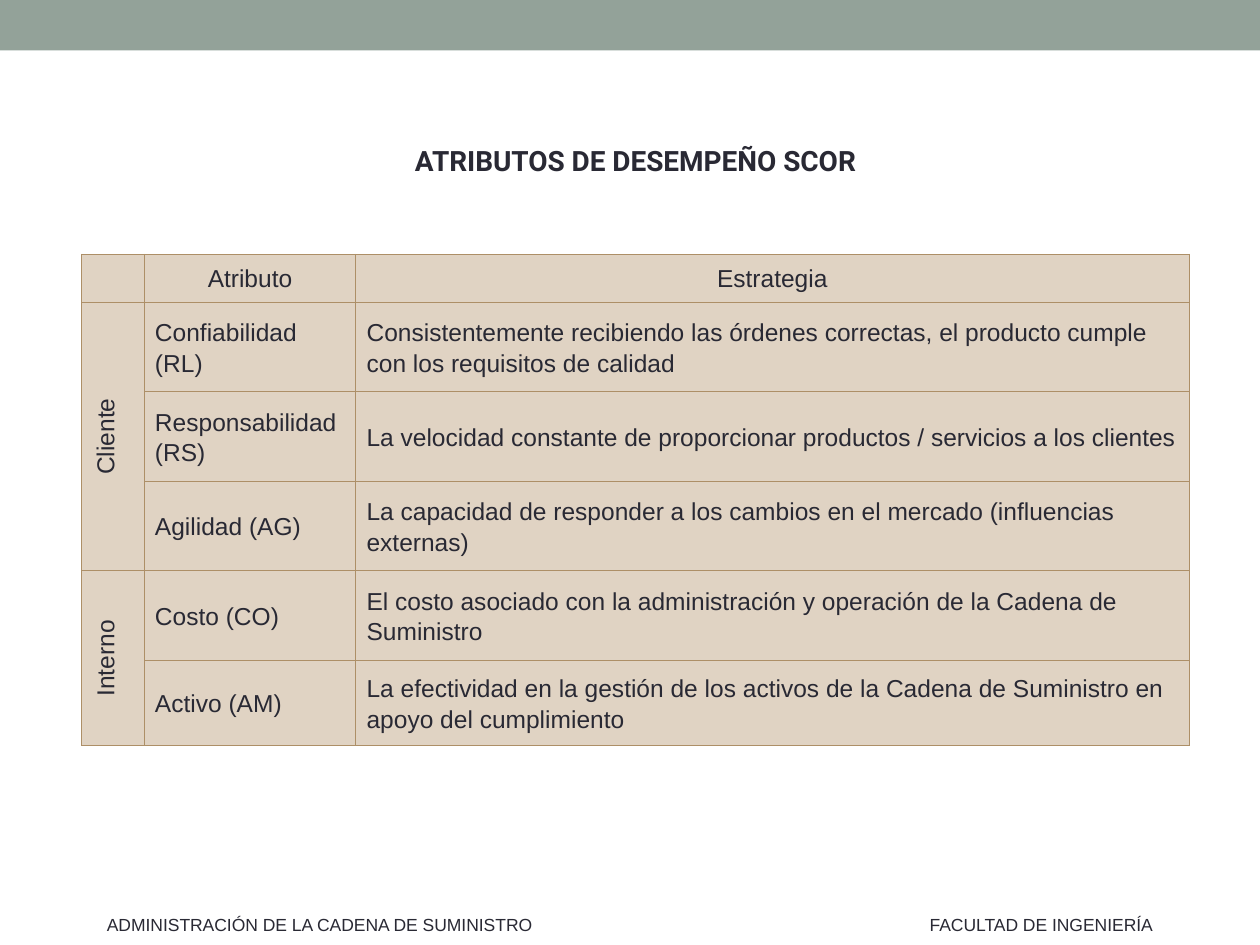
from dataclasses import dataclass

from lxml import etree
from pptx import Presentation
from pptx.dml.color import RGBColor
from pptx.enum import shapes, text
from pptx.oxml import ns
from pptx.util import Inches, Pt

WIDTH, HEIGHT = 10, 7.5
SAGE = RGBColor(0x93, 0xA2, 0x99)
INK = RGBColor(0x29, 0x29, 0x34)
SAND = RGBColor(0xE0, 0xD3, 0xC3)
BRONZE = RGBColor(0xAD, 0x8F, 0x67)

COLUMNS = (0.5, 1.67, 6.62)
ROWS = (0.38, 0.71, 0.71, 0.71, 0.71, 0.68)
HEADINGS = ("Atributo", "Estrategia")
HANGING = (0.14, -0.14)
FLUSH = (0, 0)
NUDGED = (0.03, 0)
CENTER = text.PP_ALIGN.CENTER
MIDDLE = text.MSO_ANCHOR.MIDDLE


@dataclass(frozen=True)
class Attribute:
    name: str
    strategy: str
    indent: tuple = HANGING


@dataclass(frozen=True)
class Group:
    name: str
    attributes: tuple


@dataclass(frozen=True)
class Label:
    words: str
    left: float
    top: float
    width: float
    height: float


GROUPS = (
    Group("Cliente", (
        Attribute("Confiabilidad (RL)",
                  "Consistentemente recibiendo las órdenes correctas, "
                  "el producto cumple con los requisitos de calidad", FLUSH),
        Attribute("Responsabilidad (RS)",
                  "La velocidad constante de proporcionar productos / servicios a los clientes", FLUSH),
        Attribute("Agilidad (AG)",
                  "La capacidad de responder a los cambios en el mercado (influencias externas)"),
    )),
    Group("Interno", (
        Attribute("Costo (CO)",
                  "El costo asociado con la administración y operación de la Cadena de Suministro"),
        Attribute("Activo (AM)",
                  "La efectividad en la gestión de los activos de la Cadena de Suministro "
                  "en apoyo del cumplimiento"),
    )),
)
TITLE = Label("ATRIBUTOS DE DESEMPEÑO SCOR", 0.083, 0.128, 0.843, 0.803)
FOOTERS = (
    Label("ADMINISTRACIÓN DE LA CADENA DE SUMINISTRO", 0.075, 0.961, 0.363, 0.036),
    Label("FACULTAD DE INGENIERÍA", 0.728, 0.961, 0.202, 0.036),
)


def write(frame, words: str, *, size: float, font: str = "Arial", bold: bool = False,
          align=text.PP_ALIGN.LEFT, spacing: float = 1.0, after: float = 0,
          indent: tuple = FLUSH) -> None:
    para = frame.paragraphs[0]
    para.alignment = align
    para.line_spacing = spacing
    para.space_after = Pt(after)
    properties = para._p.get_or_add_pPr()
    properties.set("marL", str(Inches(indent[0])))
    properties.set("indent", str(Inches(indent[1])))
    span = para.add_run()
    span.text = words
    span.font.name = font
    span.font.size = Pt(size)
    span.font.bold = bold
    span.font.color.rgb = INK


def add_label(page, label: Label, *, wrap: bool = False, **style) -> None:
    box = page.shapes.add_textbox(
        Inches(label.left * WIDTH), Inches(label.top * HEIGHT),
        Inches(label.width * WIDTH), Inches(label.height * HEIGHT))
    box.text_frame.word_wrap = wrap
    write(box.text_frame, label.words, **style)


def set_margins(cell, inset: float) -> None:
    cell.margin_left = cell.margin_right = Inches(inset)
    cell.margin_top = cell.margin_bottom = Inches(inset)


def dress_cell(cell) -> None:
    properties = cell._tc.get_or_add_tcPr()
    for side in ("lnL", "lnR", "lnT", "lnB"):
        line = etree.SubElement(properties, ns.qn(f"a:{side}"), w=str(Pt(0.75)))
        fill = etree.SubElement(line, ns.qn("a:solidFill"))
        etree.SubElement(fill, ns.qn("a:srgbClr"), val=str(BRONZE))
    cell.fill.solid()
    cell.fill.fore_color.rgb = SAND
    set_margins(cell, 0.03)


def fill_cell(cell, words: str, *, inset: float = 0.06, anchor=MIDDLE,
              vertical: bool = False, **style) -> None:
    set_margins(cell, inset)
    cell.vertical_anchor = anchor
    if vertical:
        cell._tc.get_or_add_tcPr().set("vert", "vert270")
    write(cell.text_frame, words, size=14, spacing=1.1, **style)


def add_attribute_table(page) -> None:
    table = page.shapes.add_table(
        len(ROWS), len(COLUMNS), Inches(0.65), Inches(2.02),
        Inches(sum(COLUMNS)), Inches(sum(ROWS))).table
    table.first_row = table.horz_banding = False
    for column, width in zip(table.columns, COLUMNS):
        column.width = Inches(width)
    for row, height in zip(table.rows, ROWS):
        row.height = Inches(height)
    for cell in table.iter_cells():
        dress_cell(cell)
    for column, heading in enumerate(HEADINGS, start=1):
        fill_cell(table.cell(0, column), heading, anchor=text.MSO_ANCHOR.TOP,
                  align=CENTER, indent=HANGING)
    first = 1
    for group in GROUPS:
        last = first + len(group.attributes) - 1
        table.cell(first, 0).merge(table.cell(last, 0))
        fill_cell(table.cell(first, 0), group.name, vertical=True, align=CENTER, indent=HANGING)
        for row, attribute in enumerate(group.attributes, start=first):
            fill_cell(table.cell(row, 1), attribute.name, inset=0.08, indent=attribute.indent)
            fill_cell(table.cell(row, 2), attribute.strategy, indent=NUDGED)
        first = last + 1


def add_band(page) -> None:
    band = page.shapes.add_shape(
        shapes.MSO_SHAPE.RECTANGLE, 0, 0, Inches(WIDTH), Inches(0.4))
    band.shadow.inherit = False
    band.fill.solid()
    band.fill.fore_color.rgb = SAGE
    band.line.fill.background()


def main() -> None:
    deck = Presentation()
    deck.slide_width, deck.slide_height = Inches(WIDTH), Inches(HEIGHT)
    page = deck.slides.add_slide(deck.slide_layouts[6])
    add_band(page)
    add_label(page, TITLE, wrap=True, size=16, font="Roboto", bold=True,
              align=CENTER, spacing=1.5, after=12)
    for footer in FOOTERS:
        add_label(page, footer, size=10)
    add_attribute_table(page)
    deck.save("out.pptx")


if __name__ == "__main__":
    main()
